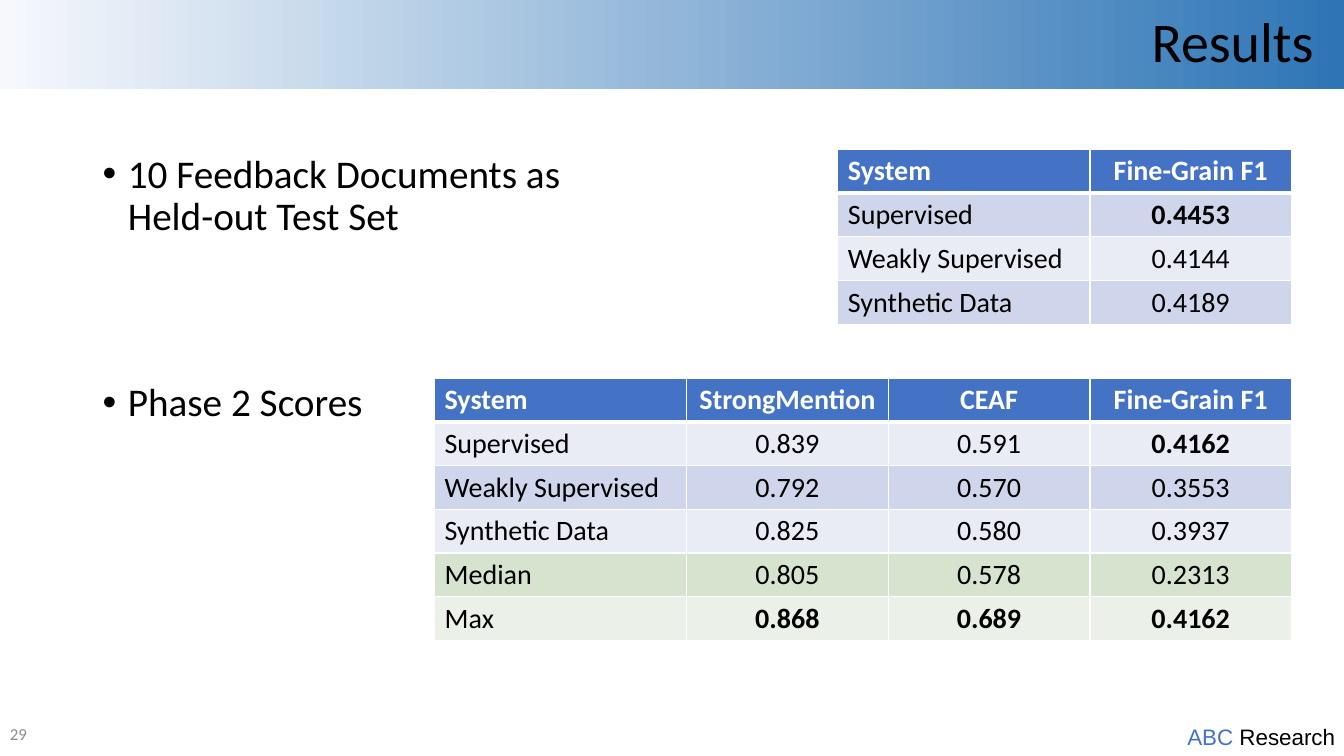
from pptx import Presentation, util as u
from pptx.dml.color import RGBColor
from pptx.enum import shapes, text
from pptx.oxml import parse_xml
from pptx.oxml.ns import nsdecls

LEFT, CENTER, RIGHT = text.PP_ALIGN.LEFT, text.PP_ALIGN.CENTER, text.PP_ALIGN.RIGHT
BLACK, WHITE, BLUE, GREY = "000000", "FFFFFF", "4472C4", "8C8C8C"
BLUE_BAND, BLUE_PALE = "CFD5EA", "E9EBF5"
GREEN_BAND, GREEN_PALE = "D5E3CF", "EBF1E9"


def rgb(value):
    return RGBColor.from_string(value)


def add_text(p, content, size=20, color=BLACK, font="Calibri", bold=False, align=LEFT):
    """Append a formatted run to paragraph p."""
    p.alignment = align
    r = p.add_run()
    r.text = content
    r.font.size, r.font.name, r.font.bold = u.Pt(size), font, bold
    r.font.color.rgb = rgb(color)


class ResultsSlide:
    ROW_HEIGHT = 0.43
    SYSTEM_WIDTH, SCORE_WIDTH = 2.5, 2

    def __init__(self, prs):
        self.slide = prs.slides.add_slide(prs.slide_layouts[6])

    def title_bar(self, content, width, height):
        sp = self.slide.shapes.add_shape(
            shapes.MSO_SHAPE.RECTANGLE, 0, 0, u.Inches(width), u.Inches(height))
        sp.shadow.inherit = False
        sp.line.fill.background()
        sp.fill.gradient()
        sp.fill.gradient_angle = 0
        for stop, color in zip(sp.fill.gradient_stops, ("F6F8FC", "2E75B6")):
            stop.color.rgb = rgb(color)
        tf = sp.text_frame
        tf.vertical_anchor = text.MSO_ANCHOR.MIDDLE
        tf.margin_right = u.Inches(0.3)
        tf.paragraphs[0].line_spacing = 0.9
        add_text(tf.paragraphs[0], content, size=40, align=RIGHT)

    def text_box(self, left, top, width, height, anchor=text.MSO_ANCHOR.TOP):
        """Add an empty text box and return its first paragraph."""
        box = self.slide.shapes.add_textbox(*map(u.Inches, (left, top, width, height)))
        tf = box.text_frame
        tf.word_wrap = True
        tf.vertical_anchor = anchor
        return tf.paragraphs[0]

    def bullet(self, content, top):
        p = self.text_box(0.92, top, 4.96, 1.95)
        p.line_spacing, p.space_before = 0.9, u.Pt(10)
        pPr = p._p.get_or_add_pPr()
        pPr.set("marL", str(u.Inches(0.25)))
        pPr.set("indent", str(-u.Inches(0.25)))
        pPr.append(parse_xml(f'<a:buFont {nsdecls("a")} typeface="Arial"/>'))
        pPr.append(parse_xml(f'<a:buChar {nsdecls("a")} char="•"/>'))
        add_text(p, content, size=28)

    def borders(self, cell, is_header):
        tcPr = cell._tc.get_or_add_tcPr()
        for i, side in enumerate("LRTB"):
            width = u.Pt(3 if is_header and side == "B" else 1)
            tcPr.insert(i, parse_xml(
                f'<a:ln{side} {nsdecls("a")} w="{width}"><a:solidFill>'
                f'<a:srgbClr val="{WHITE}"/></a:solidFill></a:ln{side}>'))

    def score_table(self, left, top, header, rows, fills):
        """Add a table whose best score in each column is bold."""
        widths = [self.SYSTEM_WIDTH] + [self.SCORE_WIDTH] * (len(header) - 1)
        best = [max(column) for column in zip(*rows)]
        table = self.slide.shapes.add_table(
            len(rows) + 1, len(header), u.Inches(left), u.Inches(top),
            u.Inches(sum(widths)), u.Inches(self.ROW_HEIGHT * (len(rows) + 1))).table
        for column, width in zip(table.columns, widths):
            column.width = u.Inches(width)
        for i, (row, fill) in enumerate(zip([header] + rows, [BLUE] + fills)):
            for j, content in enumerate(row):
                cell = table.cell(i, j)
                cell.fill.solid()
                cell.fill.fore_color.rgb = rgb(fill)
                self.borders(cell, is_header=i == 0)
                add_text(cell.text_frame.paragraphs[0], content,
                         color=BLACK if i else WHITE,
                         bold=i == 0 or (j > 0 and content == best[j]),
                         align=CENTER if j else LEFT)


def main():
    prs = Presentation()
    prs.slide_width, prs.slide_height = u.Inches(13.33), u.Inches(7.5)
    s = ResultsSlide(prs)

    footer = s.text_box(11.52, 7.13, 1.82, 0.37)
    add_text(footer, "ABC", size=16, font="Arial", color=BLUE, align=RIGHT)
    add_text(footer, " Research", size=16, font="Arial", align=RIGHT)
    s.title_bar("Results", 13.33, 0.88)

    s.score_table(8.31, 1.48, ["System", "Fine-Grain F1"], [
        ["Supervised", "0.4453"],
        ["Weakly Supervised", "0.4144"],
        ["Synthetic Data", "0.4189"],
    ], [BLUE_BAND, BLUE_PALE, BLUE_BAND])

    page_number = s.text_box(0, 7.08, 0.42, 0.4, text.MSO_ANCHOR.MIDDLE)
    add_text(page_number, "29", size=12, color=GREY)

    s.score_table(4.31, 3.75, ["System", "StrongMention", "CEAF", "Fine-Grain F1"], [
        ["Supervised", "0.839", "0.591", "0.4162"],
        ["Weakly Supervised", "0.792", "0.570", "0.3553"],
        ["Synthetic Data", "0.825", "0.580", "0.3937"],
        ["Median", "0.805", "0.578", "0.2313"],
        ["Max", "0.868", "0.689", "0.4162"],
    ], [BLUE_PALE, BLUE_BAND, BLUE_PALE, GREEN_BAND, GREEN_PALE])

    s.bullet("10 Feedback Documents as Held-out Test Set", 1.48)
    s.bullet("Phase 2 Scores", 3.75)
    prs.save("out.pptx")


if __name__ == "__main__":
    main()
